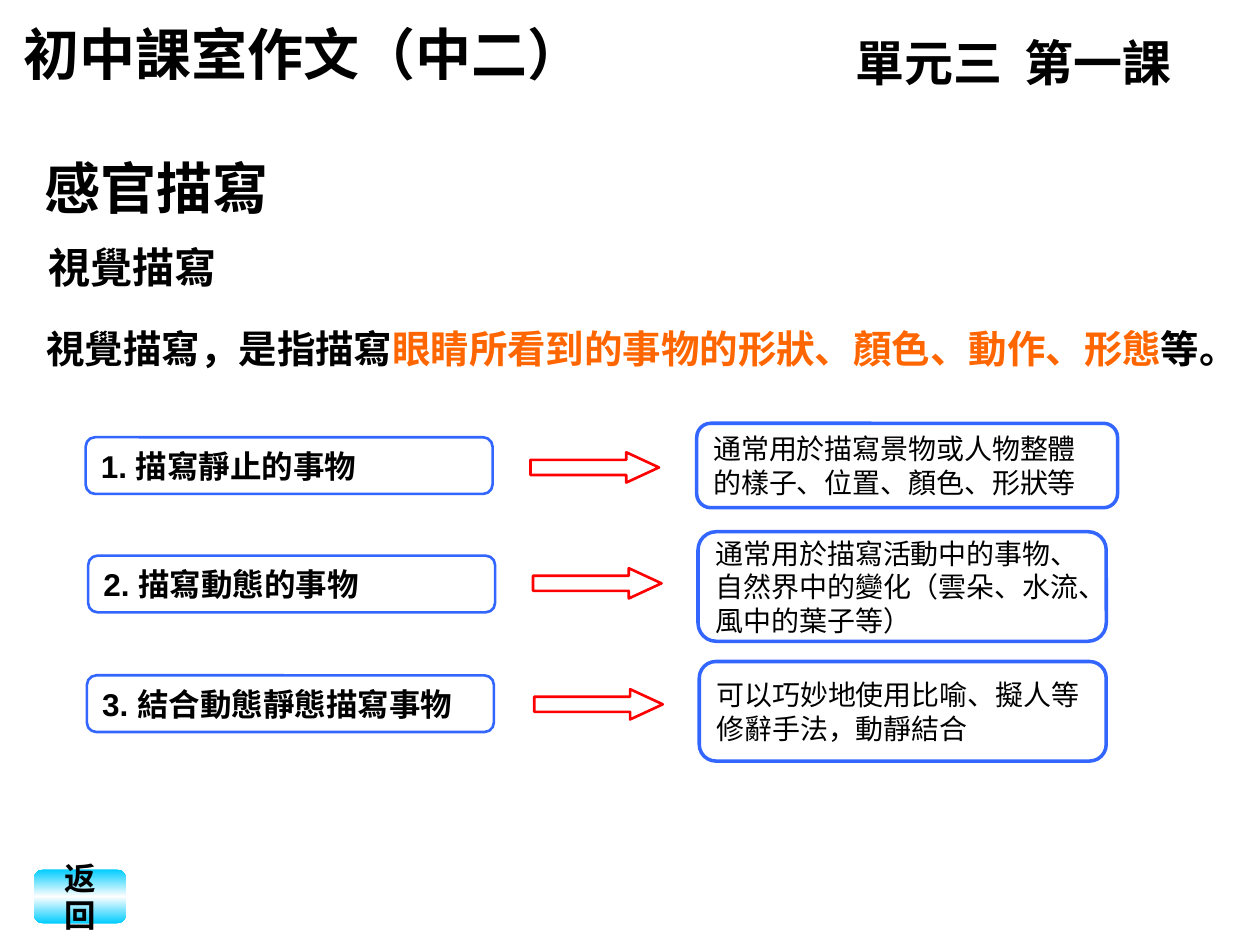
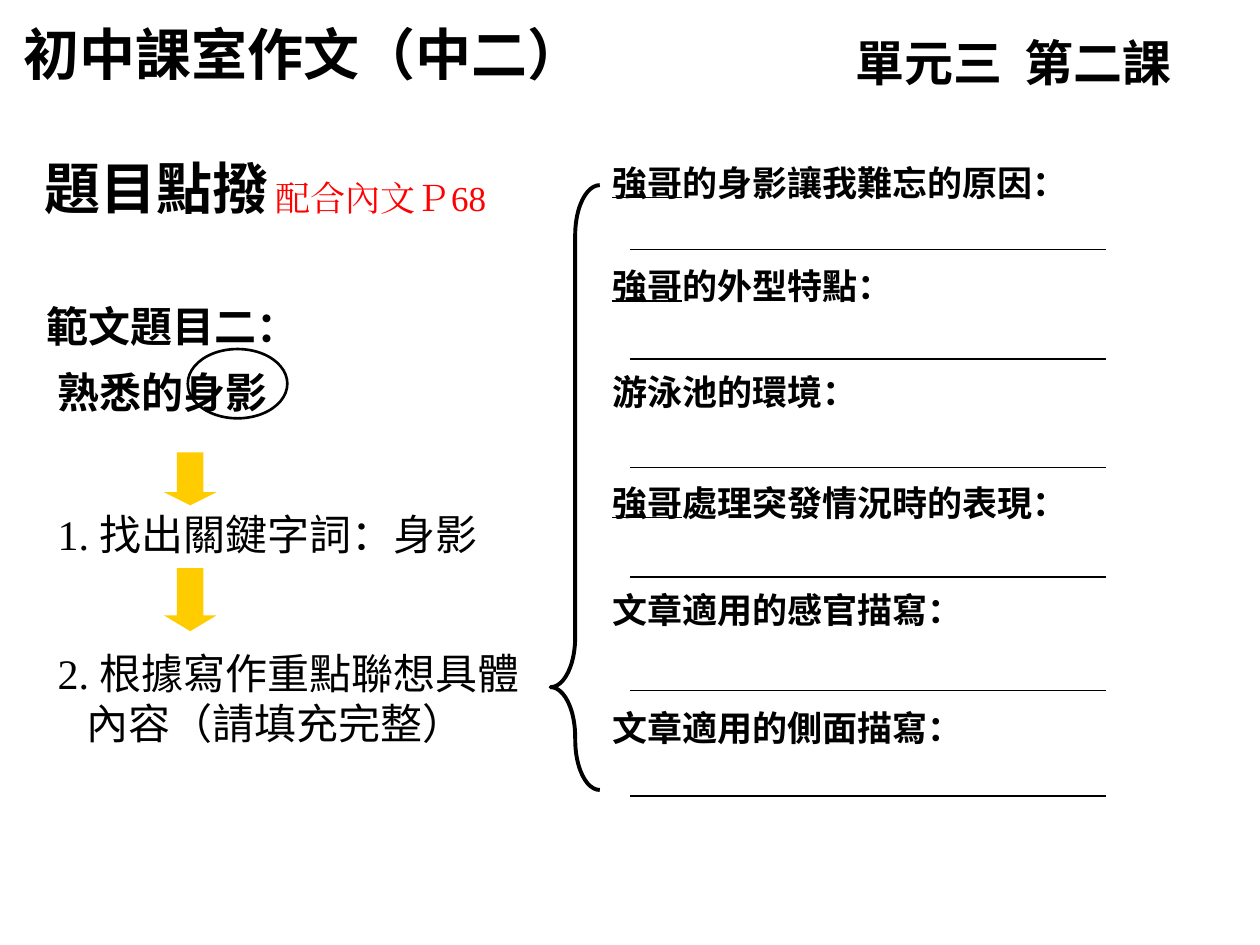
import copy
from dataclasses import dataclass, replace
import pptx
import pptx.dml.color
import pptx.enum.shapes
import pptx.enum.text
import pptx.oxml.ns
import pptx.util
from lxml import etree
from pptx.util import Inches

Shape = pptx.enum.shapes.MSO_SHAPE
Anchor = pptx.enum.text.MSO_ANCHOR
Align = pptx.enum.text.PP_ALIGN
qn = pptx.oxml.ns.qn


@dataclass(frozen=True)
class Type:
    size: float
    font: str
    color: str = "000000"
    bold: bool = True
    underline: bool = False


class Theme:
    black, white = "000000", "FFFFFF"
    blue, red, orange, yellow, cyan = "3366FF", "FF0000", "FF6600", "FFCC00", "00CCFF"
    course = Type(32, "Roboto")
    lesson = Type(28, "Roboto")
    heading = Type(32, "Arial")
    subheading = Type(24, "Noto Sans CJK TC")
    definition = Type(22, "Arial")
    label = Type(18, "Arial")
    usage = Type(16, "Arial", bold=False)
    topic = Type(24, "DejaVu Sans")
    number = Type(24, "Times New Roman", bold=False)
    keyword = Type(24, "Noto Sans CJK SC", bold=False)
    step = Type(24, "DejaVu Sans", bold=False)
    page_note = Type(20, "Times New Roman", red, False)
    prompt = Type(20, "DejaVu Sans")


class Deck:
    def __init__(self, theme):
        self.theme = theme
        self.show = pptx.Presentation()
        self.show.slide_width, self.show.slide_height = Inches(10), Inches(7.5)
        self.slide = None

    def rgb(self, color):
        return pptx.dml.color.RGBColor.from_string(color)

    def style(self, font, properties, kind):
        font.size = pptx.util.Pt(kind.size)
        font.bold = kind.bold
        font.underline = kind.underline
        font.color.rgb = self.rgb(kind.color)
        font.name = kind.font
        etree.SubElement(properties, qn("a:ea")).set("typeface", kind.font)

    def fill_text(self, frame, paragraphs, kind, align=Align.LEFT, anchor=Anchor.TOP,
                  wrap=True, spacing=None, indents=(), tab=None):
        frame.word_wrap = wrap
        frame.auto_size = pptx.enum.text.MSO_AUTO_SIZE.NONE
        frame.vertical_anchor = anchor
        for index, content in enumerate(paragraphs):
            paragraph = frame.add_paragraph() if index else frame.paragraphs[0]
            paragraph.alignment = align
            if spacing:
                paragraph.line_spacing = spacing
            properties = paragraph._p.get_or_add_pPr()
            if index < len(indents):
                properties.set("marL", str(Inches(indents[index])))
                properties.set("indent", "0")
            if tab:
                stops = etree.SubElement(properties, qn("a:tabLst"))
                etree.SubElement(stops, qn("a:tab"), pos=str(Inches(tab)), algn="l")
            if isinstance(content, str):
                paragraph.add_run().text = content
                self.style(paragraph.font, properties.find(qn("a:defRPr")), kind)
                continue
            for words, run_kind in content:
                run = paragraph.add_run()
                run.text = words
                self.style(run.font, run._r.get_or_add_rPr(), run_kind)

    def text(self, box, paragraphs, kind, **layout):
        frame = self.slide.shapes.add_textbox(*map(Inches, box)).text_frame
        self.fill_text(frame, paragraphs, kind, **layout)

    def shape(self, preset, box, fill=None, line=None, weight=1.5, adjust=()):
        shape = self.slide.shapes.add_shape(preset, *map(Inches, box))
        shape.shadow.inherit = False
        for index, value in enumerate(adjust):
            shape.adjustments[index] = value
        if fill:
            shape.fill.solid()
            shape.fill.fore_color.rgb = self.rgb(fill)
        else:
            shape.fill.background()
        if line:
            shape.line.color.rgb = self.rgb(line)
            shape.line.width = pptx.util.Pt(weight)
        else:
            shape.line.fill.background()
        return shape

    def gradient(self, shape, edge, middle):
        shape.fill.gradient()
        shape.fill.gradient_angle = 90
        stops = shape.fill.gradient_stops
        for stop, color, position in zip(stops, (edge, middle), (0, 0.5)):
            stop.color.rgb = self.rgb(color)
            stop.position = position
        stop_list = shape.element.spPr.find(qn("a:gradFill")).find(qn("a:gsLst"))
        last = copy.deepcopy(stop_list[0])
        last.set("pos", "100000")
        stop_list.append(last)

    def rule(self, left, right, y):
        line = self.slide.shapes.add_connector(
            pptx.enum.shapes.MSO_CONNECTOR.STRAIGHT, *map(Inches, (left, y, right, y)))
        line.line.color.rgb = self.rgb(self.theme.black)
        line.line.width = pptx.util.Pt(1)
        etree.SubElement(line.element.spPr, qn("a:effectLst"))

    def page(self, heading, lesson):
        self.slide = self.show.slides.add_slide(self.show.slide_layouts[5])
        title = self.slide.shapes.title
        title.left, title.top, title.width, title.height = map(Inches, (0.25, 1.17, 3.08, 0.63))
        self.fill_text(title.text_frame, [heading], self.theme.heading)
        self.text((0.09, 0.11, 5.22, 0.63), ["初中課室作文（中二）"], self.theme.course)
        self.text((6.69, 0.21, 3.35, 0.57), [f"單元三\t{lesson}"], self.theme.lesson, tab=1.34)


def visual_description(deck):
    theme = deck.theme
    deck.page("感官描寫", "第一課")
    deck.text((0.29, 1.87, 3.74, 0.5), ["視覺描寫"], theme.subheading)
    definition = [
        ("視覺描寫，是指描寫", theme.definition),
        ("眼睛所看到的事物的形狀、顏色、動作、形態", replace(theme.definition, color=theme.orange)),
        ("等。", theme.definition),
    ]
    deck.text((0.27, 2.41, 9.45, 0.71), [definition], theme.definition,
              anchor=Anchor.MIDDLE, wrap=False)

    methods = [
        ("1. 描寫靜止的事物", (0.68, 3.47), (4.21, 3.59), (5.53, 3.36, 3.34, 0.67),
         ["通常用於描寫景物或人物整體", "的樣子、位置、顏色、形狀等"]),
        ("2. 描寫動態的事物", (0.7, 4.41), (4.23, 4.51), (5.54, 4.22, 3.24, 0.87),
         ["通常用於描寫活動中的事物、", "自然界中的變化（雲朵、水流、", "風中的葉子等）"]),
        ("3. 結合動態靜態描寫事物", (0.69, 5.36), (4.24, 5.47), (5.55, 5.25, 3.23, 0.79),
         ["可以巧妙地使用比喻、擬人等", "修辭手法，動靜結合"]),
    ]
    for method, method_at, arrow_at, usage_box, usage in methods:
        label = deck.shape(Shape.ROUNDED_RECTANGLE, (*method_at, 3.23, 0.45), line=theme.blue)
        deck.fill_text(label.text_frame, [method], theme.label, anchor=Anchor.MIDDLE)
        deck.shape(Shape.RIGHT_ARROW, (*arrow_at, 1.02, 0.24), theme.white, theme.red,
                   adjust=(0.5, 1.08))
        panel = deck.shape(Shape.FLOWCHART_ALTERNATE_PROCESS, usage_box, theme.white,
                           theme.blue, 2)
        deck.fill_text(panel.text_frame, usage, theme.usage, anchor=Anchor.MIDDLE, wrap=False)

    back = deck.shape(Shape.FLOWCHART_ALTERNATE_PROCESS, (0.27, 6.9, 0.73, 0.43))
    deck.gradient(back, theme.cyan, theme.white)
    deck.fill_text(back.text_frame, ["返回"], theme.label, align=Align.CENTER,
                   anchor=Anchor.MIDDLE)


def topic_guidance(deck):
    theme = deck.theme
    deck.page("題目點撥", "第二課")
    deck.text((2.09, 1.35, 2.47, 0.43), ["配合內文Ｐ68"], theme.page_note)
    deck.text((0.27, 2.22, 5, 1.14), ["範文題目二：", "熟悉的身影"], theme.topic,
              spacing=1.3, indents=(0, 0.09))
    deck.shape(Shape.OVAL, (1.49, 2.77, 0.79, 0.55), line=theme.black)
    for top, height, head in ((3.59, 0.42, 0.25), (4.51, 0.5, 0.3)):
        deck.shape(Shape.DOWN_ARROW, (1.3, top, 0.42, height), theme.yellow, adjust=(0.5, head))
    deck.text((0.36, 3.99, 4.08, 0.5),
              [[("1. ", theme.number), ("找出關鍵字詞：身影", theme.keyword)]], theme.number)
    deck.text((0.36, 5.09, 4.17, 0.9),
              [[("2. ", theme.number), ("根據寫作重點聯想具體", theme.step)],
               "內容（請填充完整）"], theme.step, indents=(0, 0.23))
    deck.shape(Shape.LEFT_BRACE, (4.37, 1.47, 0.39, 4.8), line=theme.black, weight=2.25,
               adjust=(1.02, 0.83))

    underlined = replace(theme.prompt, underline=True)
    prompts = [
        ("強哥", "的身影讓我難忘的原因：", 1.23, 1.98),
        ("強哥", "的外型特點：", 2.05, 2.85),
        ("", "游泳池的環境：", 2.89, 3.71),
        ("強哥", "處理突發情況時的表現：", 3.77, 4.58),
        ("", "文章適用的感官描寫：", 4.62, 5.48),
        ("", "文章適用的側面描寫：", 5.56, 6.32),
    ]
    for person, question, top, answer_y in prompts:
        content = [(person, underlined), (question, theme.prompt)] if person else question
        deck.text((4.76, top, 4.72, 0.43), [content], theme.prompt)
        deck.rule(5, 8.78, answer_y)


def main():
    deck = Deck(Theme())
    visual_description(deck)
    topic_guidance(deck)
    deck.show.save("out.pptx")


if __name__ == "__main__":
    main()
